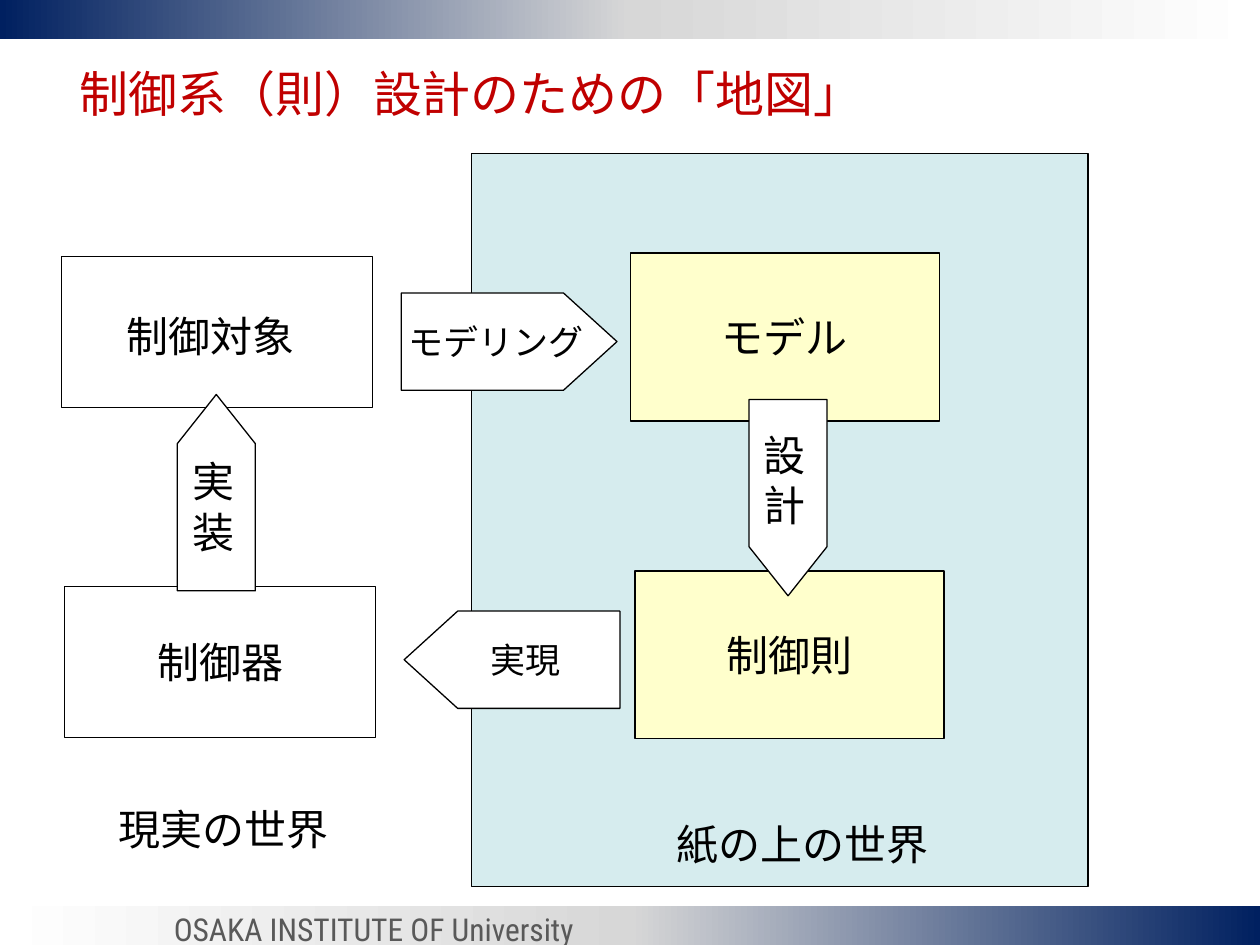
from copy import deepcopy

from pptx import Presentation
from pptx.dml.color import RGBColor
from pptx.enum.shapes import MSO_SHAPE
from pptx.enum.text import MSO_ANCHOR, MSO_AUTO_SIZE, PP_ALIGN
from pptx.oxml.ns import qn
from pptx.util import Pt

RECTANGLE, PENTAGON = MSO_SHAPE.RECTANGLE, MSO_SHAPE.PENTAGON
LEFT, CENTER = PP_ALIGN.LEFT, PP_ALIGN.CENTER
TOP, MIDDLE = MSO_ANCHOR.TOP, MSO_ANCHOR.MIDDLE
NO_FIT = MSO_AUTO_SIZE.NONE
TITLE_ONLY = 5

COLORS = {
    "navy": "002060", "silver": "D7D7D7", "white": "FFFFFF", "black": "000000",
    "red": "C00000", "gray": "595959", "paper": "D6ECEE", "yellow": "FFFFCC",
}
WIDTH, HEIGHT = 720, 540
BAND_HEIGHT = 22.3


def rgb(name):
    return RGBColor.from_string(COLORS[name])


def write_text(frame, text, size=24, font="Arial", color="black",
               align=LEFT, anchor=TOP, wrap=False):
    """Fill a text frame, one paragraph per line of text."""
    frame.auto_size = NO_FIT
    frame.word_wrap = wrap
    frame.vertical_anchor = anchor
    for index, line in enumerate(text.split("\n")):
        para = frame.paragraphs[0] if index == 0 else frame.add_paragraph()
        para.alignment = align
        span = para.add_run()
        span.text = line
        span.font.size = Pt(size)
        span.font.name = font
        span.font.color.rgb = rgb(color)


class SlideBuilder:
    """Holds the line style and the current slide."""

    line_width = 0.75
    line_color = "black"

    def __init__(self, slide):
        self.slide = slide

    def title(self, text, left, top, width, height, **style):
        holder = self.slide.shapes.title
        holder.left, holder.top = Pt(left), Pt(top)
        holder.width, holder.height = Pt(width), Pt(height)
        write_text(holder.text_frame, text, **style)

    def label(self, text, left, top, width, height, **style):
        box = self.slide.shapes.add_textbox(
            Pt(left), Pt(top), Pt(width), Pt(height))
        write_text(box.text_frame, text, **style)

    def shape(self, kind, left, top, width, height):
        shape = self.slide.shapes.add_shape(
            kind, Pt(left), Pt(top), Pt(width), Pt(height))
        shape.shadow.inherit = False
        return shape

    def band(self, top, rotation=0):
        """Full-width bar fading from navy through silver to white."""
        bar = self.shape(RECTANGLE, 0, top, WIDTH, BAND_HEIGHT)
        bar.rotation = rotation
        bar.line.fill.background()
        bar.fill.gradient()
        bar.fill.gradient_angle = 0
        stop_list = bar._element.spPr.find(qn("a:gradFill")).find(qn("a:gsLst"))
        stop_list.insert(1, deepcopy(stop_list[0]))
        stops = zip(bar.fill.gradient_stops, ("navy", "silver", "white"), (0, 0.5, 1))
        for stop, color, position in stops:
            stop.color.rgb = rgb(color)
            stop.position = position

    def box(self, left, top, width, height, fill="white", text="",
            size=24, kind=RECTANGLE):
        shape = self.shape(kind, left, top, width, height)
        shape.fill.solid()
        shape.fill.fore_color.rgb = rgb(fill)
        shape.line.color.rgb = rgb(self.line_color)
        shape.line.width = Pt(self.line_width)
        if text:
            write_text(shape.text_frame, text, size=size, align=CENTER, anchor=MIDDLE)
        return shape

    def arrow(self, left, top, width, height, point, text="", rotation=0, flip=False):
        arrow = self.box(left, top, width, height, text=text, size=20, kind=PENTAGON)
        arrow.adjustments[0] = point
        arrow.rotation = rotation
        if flip:
            arrow._element.spPr.find(qn("a:xfrm")).set("flipH", "1")


def main():
    deck = Presentation()
    deck.slide_width, deck.slide_height = Pt(WIDTH), Pt(HEIGHT)
    page = SlideBuilder(deck.slides.add_slide(deck.slide_layouts[TITLE_ONLY]))

    # Header, footer and title
    page.band(HEIGHT - BAND_HEIGHT, rotation=180)
    page.band(0)
    page.label("OSAKA INSTITUTE OF University", 92.2, 516.2, 279.4, 29,
               size=18, font="Roboto Condensed", color="gray", wrap=True)
    page.title("制御系（則）設計のための「地図」", 38.2, 32.4, 462.2, 41,
               size=28, color="red")

    # Real world: plant and controller
    real_size = (178, 86.4)
    page.box(35, 146.7, *real_size)
    page.label("制御対象", 65.5, 174.2, 110.2, 36)
    page.box(36.8, 335, *real_size, text="制御器")
    page.label("現実の世界", 60.5, 455.8, 134.6, 36)

    # World on paper: model and control law
    page.box(269.4, 87.7, 352.4, 418.7, fill="paper")
    page.label("紙の上の世界", 379.4, 464.4, 158.4, 36)
    paper_size = (176.6, 96)
    page.box(360.2, 144.6, *paper_size, fill="yellow", text="モデル")
    page.box(362.8, 326.2, *paper_size, fill="yellow", text="制御則")

    # Arrows between the worlds
    across = (123.3, 55.6, 0.55)
    page.arrow(229.3, 167.4, *across, text="モデリング")
    page.arrow(231, 349.2, *across, text="実現", flip=True)

    # Upright arrows with stacked labels
    upright = (112.2, 44.6, 0.63)
    stacked = (38.2, 64.8)
    page.arrow(67.5, 259.2, *upright, rotation=270)
    page.label("実\n装", 103, 257, *stacked)
    page.arrow(394.2, 262.1, *upright, rotation=90)
    page.label("設\n計", 429.1, 241.9, *stacked)

    deck.save("out.pptx")


if __name__ == "__main__":
    main()
